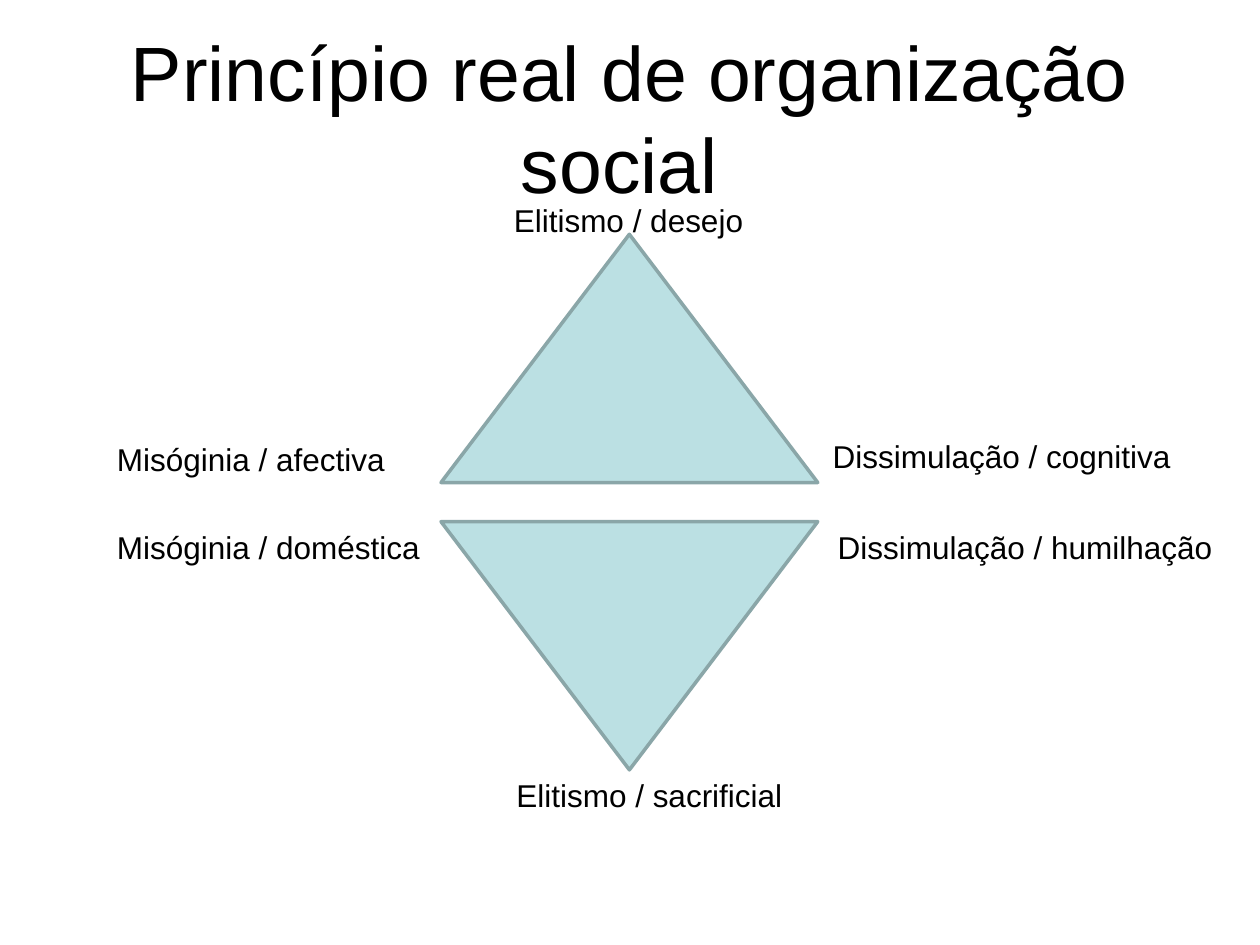
from pptx import Presentation
from pptx.dml.color import RGBColor
from pptx.enum.shapes import MSO_SHAPE
from pptx.enum.text import MSO_ANCHOR, MSO_AUTO_SIZE, PP_ALIGN
from pptx.util import Pt

TRIANGLE = MSO_SHAPE.ISOSCELES_TRIANGLE
MIDDLE = MSO_ANCHOR.MIDDLE
FIT_SHAPE = MSO_AUTO_SIZE.SHAPE_TO_FIT_TEXT
CENTER, LEFT = PP_ALIGN.CENTER, PP_ALIGN.LEFT

EMU_PER_PX = 9144  # 100 px to the inch
TITLE_ONLY = 5
FONT = "Arial"
BLACK, FILL, OUTLINE = "000000", "BBE0E3", "8AA6A8"
TRIANGLE_HEIGHT = 197
LABEL_HEIGHT = 40


def px(*lengths):
    return [length * EMU_PER_PX for length in lengths]


def color(hex_string):
    return RGBColor.from_string(hex_string)


def write(shape, text, size, alignment):
    paragraph = shape.text_frame.paragraphs[0]
    paragraph.alignment = alignment
    run = paragraph.add_run()
    run.text = text
    run.font.name = FONT
    run.font.size = Pt(size)
    run.font.color.rgb = color(BLACK)


def add_title(slide, box, text):
    title = slide.shapes.title
    title.left, title.top, title.width, title.height = px(*box)
    title.text_frame.word_wrap = True
    title.text_frame.auto_size = MSO_AUTO_SIZE.NONE
    title.text_frame.vertical_anchor = MIDDLE
    write(title, text, 44, CENTER)


def add_triangle(slide, left, top, width, rotation):
    triangle = slide.shapes.add_shape(
        TRIANGLE, *px(left, top, width, TRIANGLE_HEIGHT))
    triangle.rotation = rotation
    triangle.shadow.inherit = False
    triangle.fill.solid()
    triangle.fill.fore_color.rgb = color(FILL)
    triangle.line.color.rgb = color(OUTLINE)
    triangle.line.width = Pt(2)


def add_label(slide, left, top, width, text):
    label = slide.shapes.add_textbox(*px(left, top, width, LABEL_HEIGHT))
    label.text_frame.word_wrap = False
    label.text_frame.auto_size = FIT_SHAPE
    write(label, text, 18, LEFT)


def add_diagram(slide, box):
    """Two mirrored triangles with a label near each corner."""
    left, top, width, height = box
    lower_top = top + height - TRIANGLE_HEIGHT

    # Upper triangle points up, lower one points down
    add_triangle(slide, left, top, width, 0)
    add_triangle(slide, left, lower_top, width, 180)

    # Corner labels: offset from the diagram's left and top, width, text
    labels = [
        (48, -31, 204, "Elitismo / desejo"),
        (-267, 158, 235, "Misóginia / afectiva"),
        (301, 156, 291, "Dissimulação / cognitiva"),
        (-267, lower_top - top, 263, "Misóginia / doméstica"),
        (305, lower_top - top, 320, "Dissimulação / humilhação"),
        (50, height, 233, "Elitismo / sacrificial"),
    ]
    for offset_x, offset_y, label_width, text in labels:
        add_label(slide, left + offset_x, top + offset_y, label_width, text)


def main():
    presentation = Presentation()
    presentation.slide_width, presentation.slide_height = px(1000, 750)
    slide = presentation.slides.add_slide(
        presentation.slide_layouts[TITLE_ONLY])
    add_title(slide, (50, 30, 900, 125), "Princípio real de organização social ")
    add_diagram(slide, (350, 186, 299, 425))
    presentation.save("out.pptx")


if __name__ == "__main__":
    main()
